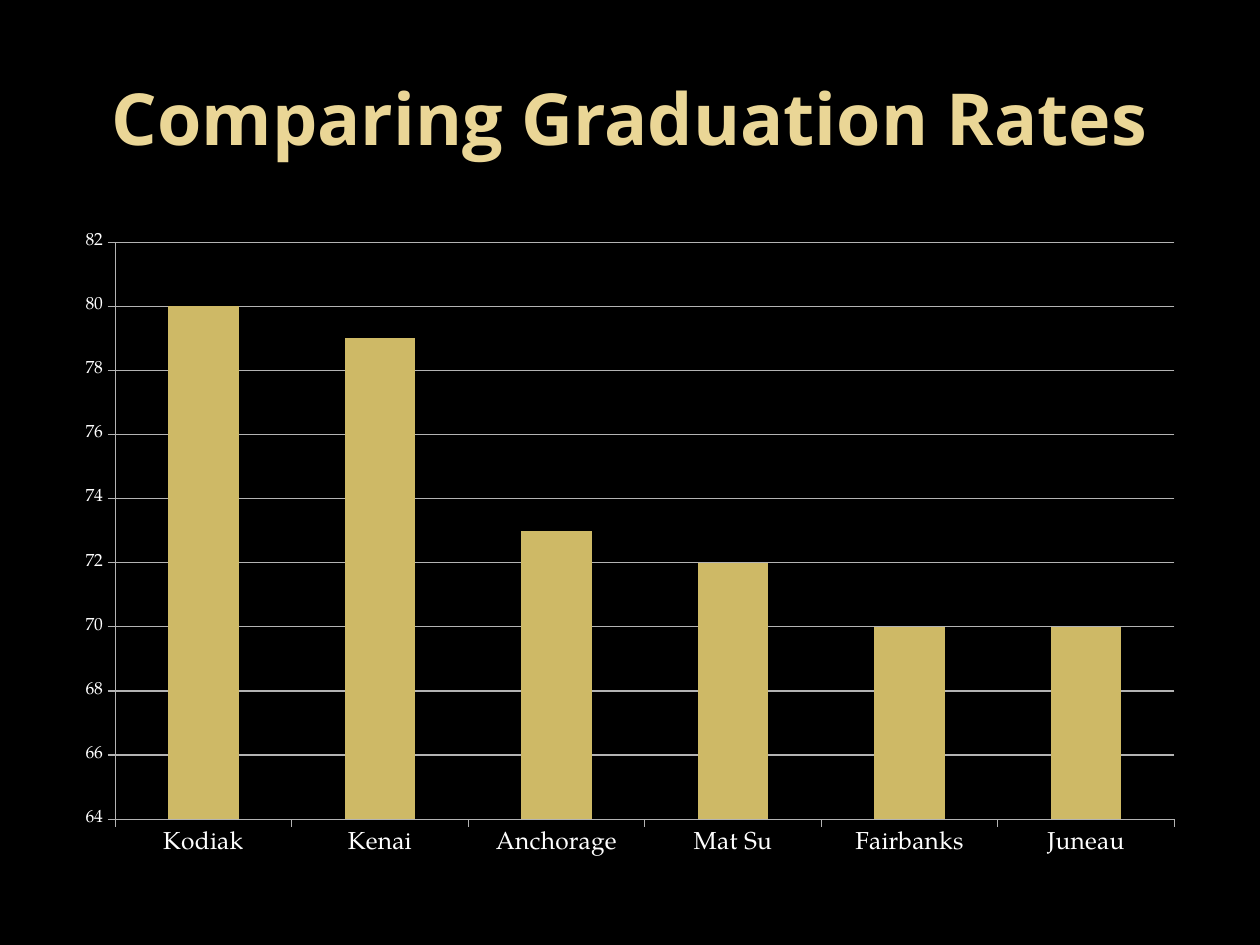
from pptx import Presentation
from pptx import util as u
from pptx.chart import data
from pptx.dml import color
from pptx.enum import chart as ch, text

TITLE_FONT = "Open Sans"
CHART_FONT = "TeX Gyre Pagella"
RATES = {
    "Kodiak": 80,
    "Kenai": 79,
    "Anchorage": 73,
    "Mat Su": 72,
    "Fairbanks": 70,
    "Juneau": 70,
}


def rgb(hex_code):
    return color.RGBColor.from_string(hex_code)


def style_font(font, name, size, hex_code, bold=False):
    font.name = name
    font.size = u.Pt(size)
    font.bold = bold
    font.color.rgb = rgb(hex_code)


def style_line(line):
    line.color.rgb = rgb("B3B3B3")
    line.width = u.Pt(0.75)


def add_title(s, left, top, width, height):
    tf = s.shapes.add_textbox(left, top, width, height).text_frame
    tf.word_wrap = True
    tf.vertical_anchor = text.MSO_ANCHOR.MIDDLE
    p = tf.paragraphs[0]
    p.alignment = text.PP_ALIGN.CENTER
    r = p.add_run()
    r.text = "Comparing Graduation Rates"
    style_font(r.font, TITLE_FONT, 41, "EAD696", bold=True)


def add_rates_chart(s, left, top, width, height):
    rates = data.CategoryChartData()
    rates.categories = list(RATES)
    rates.add_series("Series 1", list(RATES.values()))
    chart = s.shapes.add_chart(
        ch.XL_CHART_TYPE.COLUMN_CLUSTERED, left, top, width, height, rates
    ).chart
    chart.has_legend = False
    chart.has_title = False
    style_font(chart.font, CHART_FONT, 10, "FFFFFF")

    plot = chart.plots[0]
    plot.gap_width = 150
    plot.vary_by_categories = False
    fill = plot.series[0].format.fill
    fill.solid()
    fill.fore_color.rgb = rgb("CEB966")

    for axis, size in ((chart.category_axis, 14), (chart.value_axis, 10)):
        axis.major_tick_mark = ch.XL_TICK_MARK.OUTSIDE
        axis.minor_tick_mark = ch.XL_TICK_MARK.NONE
        style_font(axis.tick_labels.font, CHART_FONT, size, "FFFFFF")
        style_line(axis.format.line)

    axis = chart.value_axis
    axis.minimum_scale, axis.maximum_scale, axis.major_unit = 64, 82, 2
    axis.has_major_gridlines = True
    style_line(axis.major_gridlines.format.line)


def main():
    prs = Presentation()
    prs.slide_width, prs.slide_height = u.Cm(25.4), u.Cm(19.05)
    s = prs.slides.add_slide(prs.slide_layouts[6])
    s.background.fill.solid()
    s.background.fill.fore_color.rgb = rgb("000000")
    margin = u.Cm(1.27)
    width = prs.slide_width - 2 * margin
    add_title(s, margin, u.Cm(0.76), width, u.Cm(3.18))
    add_rates_chart(s, margin, u.Cm(4.45), width, u.Cm(13.08))
    prs.save("out.pptx")


if __name__ == "__main__":
    main()
